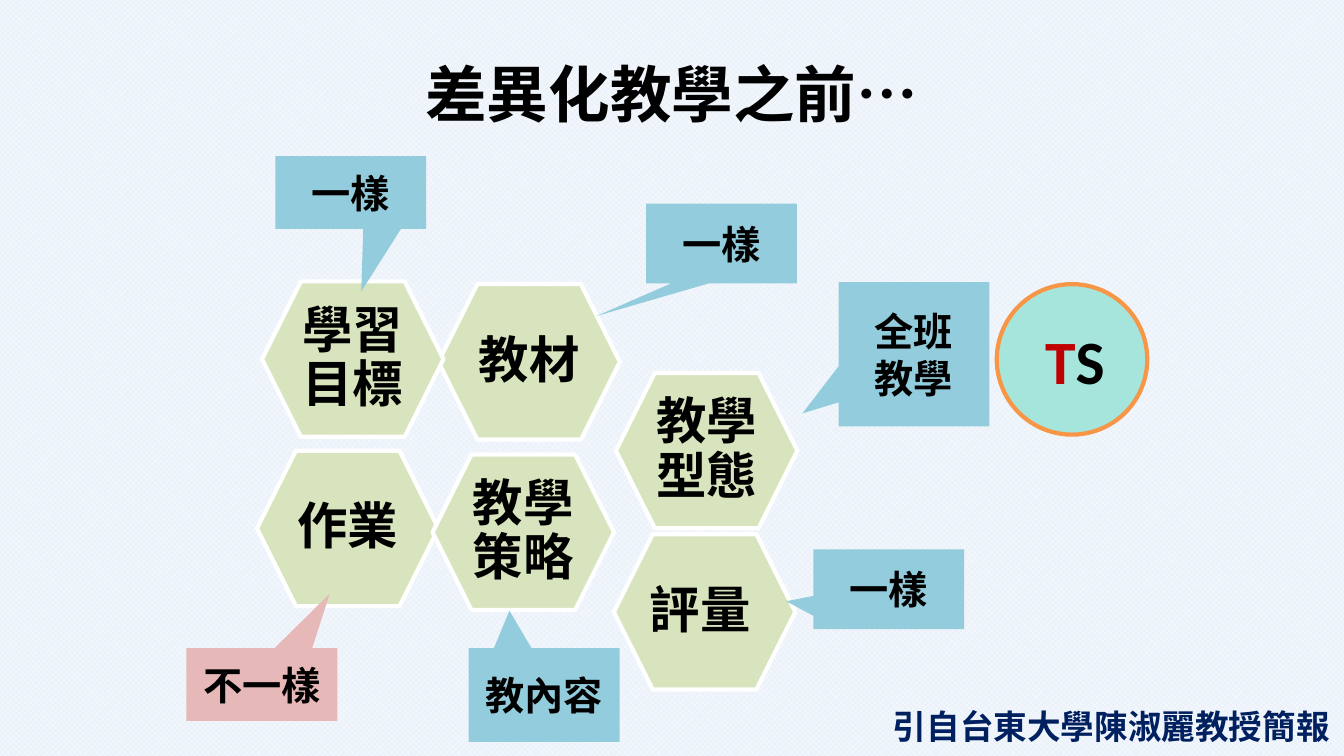
from dataclasses import dataclass
from lxml.etree import SubElement as Sub
from pptx import Presentation
from pptx.dml.color import RGBColor as RGB
from pptx.enum.dml import MSO_PATTERN as Pat
from pptx.enum.shapes import MSO_SHAPE as Kind
from pptx.enum.text import MSO_ANCHOR as Anchor, PP_ALIGN as Align
from pptx.oxml.ns import qn
from pptx.util import Pt


@dataclass(frozen=True)
class Theme:
    """Colours, fonts and type sizes."""
    ink: str = "000000"
    white: str = "FFFFFF"
    mist: str = "ECF2FA"
    green: str = "D7E4BD"
    blue: str = "93CDDD"
    pink: str = "E6B9B8"
    mint: str = "A5E5DC"
    amber: str = "F79646"
    red: str = "C00000"
    navy: str = "002060"
    cjk: str = "Noto Sans CJK SC"
    latin: str = "Calibri"
    head: int = 44
    topic: int = 36
    note: int = 28
    foot: int = 24


def write(frame, text, size, font, colors, align=Align.CENTER, space=None,
          pad=(7.2, 3.6, 7.2, 3.6), anchor=Anchor.MIDDLE, wrap=True):
    """Fill a frame, one paragraph per line; several colours go letter by letter."""
    frame.word_wrap = wrap
    frame.vertical_anchor = anchor
    (frame.margin_left, frame.margin_top,
     frame.margin_right, frame.margin_bottom) = map(Pt, pad)
    for num, line in enumerate(text.split("\n")):
        para = frame.add_paragraph() if num else frame.paragraphs[0]
        para.alignment = align
        if space:
            para.line_spacing = space
        parts = [line] if len(colors) == 1 else line
        for part, color in zip(parts, colors):
            run = para.add_run()
            run.text = part
            run.font.size = Pt(size)
            run.font.bold = True
            run.font.color.rgb = RGB.from_string(color)
            run.font.name = font
            Sub(run.font._element, qn("a:ea"), typeface=Theme.cjk)


class Board:
    """A slide and its style."""

    def __init__(self, deck, theme):
        """Add a blank slide."""
        self.theme = theme
        self.slide = deck.slides.add_slide(deck.slide_layouts[6])

    def shape(self, kind, box, fill, line=None):
        """Add a flat preset shape."""
        item = self.slide.shapes.add_shape(kind, *map(Pt, box))
        item.shadow.inherit = False
        item.fill.solid()
        item.fill.fore_color.rgb = RGB.from_string(fill)
        if line:
            item.line.color.rgb = RGB.from_string(line)
            item.line.width = Pt(3)
        else:
            item.line.fill.background()
        return item

    def ground(self, wide, high):
        """Cover the slide with a diamond pattern."""
        fill = self.shape(Kind.RECTANGLE, (0, 0, wide, high), self.theme.mist).fill
        fill.patterned()
        fill.pattern = Pat.SOLID_DIAMOND
        fill.fore_color.rgb = RGB.from_string(self.theme.white)
        fill.back_color.rgb = RGB.from_string(self.theme.mist)

    def label(self, text, box, **form):
        """Add a free text box."""
        item = self.slide.shapes.add_textbox(*map(Pt, box))
        write(item.text_frame, text, **form)

    def topic(self, text, left, top, right=0):
        """Add a hexagon with its topic."""
        look = self.theme
        item = self.shape(Kind.HEXAGON, (left, top, 129.6, 111), look.green, look.white)
        item.adjustments[0] = 0.25
        write(item.text_frame, text, look.topic, look.cjk, [look.ink],
              space=0.9, pad=(0, 3, right, 3))

    def note(self, text, left, top, high, tip, fill):
        """Add a callout; the tip is relative to its centre."""
        look = self.theme
        item = self.shape(Kind.RECTANGULAR_CALLOUT, (left, top, 107.75, high), fill)
        item.adjustments[0], item.adjustments[1] = tip
        write(item.text_frame, text, look.note, look.cjk, [look.ink])


def main():
    """Build the slide."""
    deck = Presentation()
    wide, high = 960, 540
    deck.slide_width, deck.slide_height = Pt(wide), Pt(high)
    look = Theme()
    board = Board(deck, look)
    board.ground(wide, high)
    board.label("差異化教學之前…", (48, 21.6, 864, 90),
                size=look.head, font=look.cjk, colors=[look.ink])

    for topic in (
        ("教材", 313.2, 203),
        ("作業", 183.6, 322),
        ("教學策略", 309, 324.7),
        ("學習目標", 187.2, 201),
        ("教學型態", 440, 266.4),
        ("評量", 438.5, 381.6, 6),
    ):
        board.topic(*topic)

    for note in (
        ("全班\n教學", 599, 201.6, 103, (-0.74, 0.41), look.blue),
        ("一樣", 461.5, 145.4, 57, (-0.83, 0.91), look.blue),
        ("教內容", 334.8, 463, 67, (-0.23, -0.9), look.blue),
        ("一樣", 196.6, 111.6, 52, (0.07, 1.36), look.blue),
        ("不一樣", 133.2, 463, 52, (0.45, -1.25), look.pink),
        ("一樣", 581, 392.4, 57, (-0.68, 0.15), look.blue),
    ):
        board.note(*note)

    board.shape(Kind.OVAL, (712, 203, 107.5, 107.5), look.mint, look.amber)
    plain = dict(font=look.latin, align=Align.LEFT, anchor=Anchor.TOP, wrap=False)
    board.label("TS", (739.4, 226.8, 57, 60.5), size=look.head,
                colors=[look.red, look.ink], **plain)
    board.label("引自台東大學陳淑麗教授簡報", (630.7, 500.4, 329.8, 36),
                size=look.foot, colors=[look.navy], **plain)
    deck.save("out.pptx")


if __name__ == "__main__":
    main()
